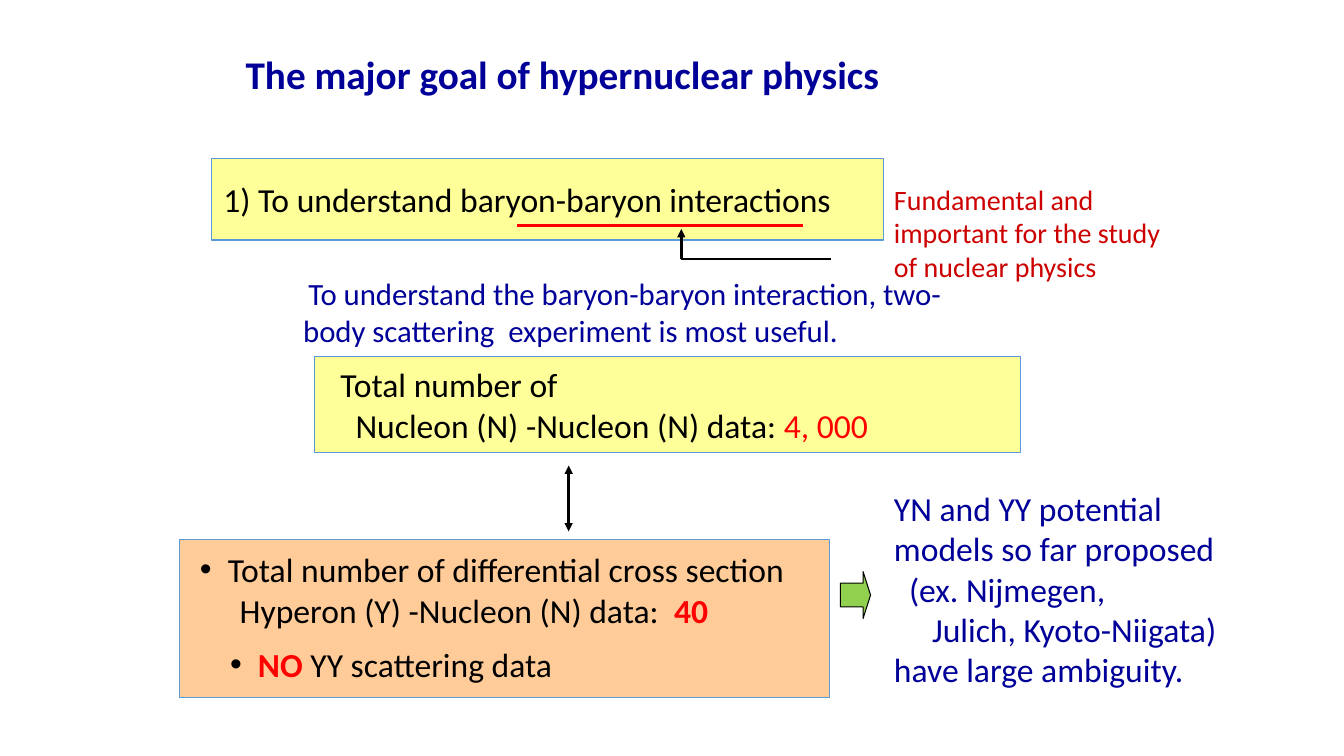
from dataclasses import dataclass

from lxml import etree
from pptx import Presentation
from pptx.dml.color import RGBColor
from pptx.enum.shapes import MSO_CONNECTOR, MSO_SHAPE
from pptx.enum.text import MSO_ANCHOR, MSO_AUTO_SIZE, PP_ALIGN
from pptx.oxml.ns import qn
from pptx.util import Cm, Pt

STRAIGHT = MSO_CONNECTOR.STRAIGHT
RECTANGLE = MSO_SHAPE.RECTANGLE
RIGHT_ARROW = MSO_SHAPE.RIGHT_ARROW
TOP = MSO_ANCHOR.TOP
MIDDLE = MSO_ANCHOR.MIDDLE
NO_RESIZE = MSO_AUTO_SIZE.NONE
LEFT = PP_ALIGN.LEFT


@dataclass(frozen=True)
class Theme:
    font: str = "Calibri"
    navy: str = "000099"
    black: str = "000000"
    red: str = "FF0000"
    crimson: str = "CC0000"
    yellow: str = "FFFF99"
    orange: str = "FFCC99"
    green: str = "92D050"
    outline: str = "5B9BD5"
    title_size: float = 28
    main_size: float = 24
    remark_size: float = 22
    note_size: float = 20
    thin: float = 0.75
    medium: float = 1.75
    thick: float = 2.25


@dataclass(frozen=True)
class Line:
    text: str
    highlight: str = ""
    rest: str = ""
    margin: float = 0
    first: float = 0
    bullet: bool = False
    before: float = 0


class SlideBuilder:
    def __init__(self, slide, theme):
        self.slide = slide
        self.theme = theme

    def place(self, shape, box):
        shape.left, shape.top, shape.width, shape.height = (Cm(length) for length in box)

    def paint(self, shape, fill, outline):
        shape.fill.solid()
        shape.fill.fore_color.rgb = RGBColor.from_string(fill)
        shape.line.color.rgb = RGBColor.from_string(outline)
        shape.line.width = Pt(self.theme.thin)

    def format_run(self, run, size, color, bold=False):
        run.font.name = self.theme.font
        run.font.size = Pt(size)
        run.font.bold = bold
        run.font.color.rgb = RGBColor.from_string(color)

    def add_bullet(self, properties):
        bullet_color = etree.SubElement(properties, qn("a:buClr"))
        etree.SubElement(bullet_color, qn("a:srgbClr"), val=self.theme.black)
        etree.SubElement(properties, qn("a:buFont"), typeface="Arial")
        etree.SubElement(properties, qn("a:buChar"), char="•")

    def fill_text(self, shape, lines, size, color, anchor=TOP, inset=0.25, bold=False, bold_highlight=False):
        frame = shape.text_frame
        frame.word_wrap = True
        frame.auto_size = NO_RESIZE
        frame.vertical_anchor = anchor
        frame.margin_left = Cm(inset)
        frame.text = "\n".join(line.text for line in lines)
        for paragraph, line in zip(frame.paragraphs, lines):
            paragraph.alignment = LEFT
            paragraph.space_before = Pt(line.before)
            properties = paragraph._p.get_or_add_pPr()
            properties.set("marL", str(Cm(line.margin)))
            properties.set("indent", str(Cm(line.first)))
            if line.bullet:
                self.add_bullet(properties)
            else:
                etree.SubElement(properties, qn("a:buNone"))
            for run in paragraph.runs:
                self.format_run(run, size, color, bold)
            if line.highlight:
                run = paragraph.add_run()
                run.text = line.highlight
                self.format_run(run, size, self.theme.red, bold_highlight)
            if line.rest:
                run = paragraph.add_run()
                run.text = line.rest
                self.format_run(run, size, color)

    def title(self, box, text):
        shape = self.slide.shapes.title
        self.place(shape, box)
        self.fill_text(shape, [Line(text)], self.theme.title_size, self.theme.navy, MIDDLE, bold=True)

    def body(self, box, lines, fill):
        shape = self.slide.placeholders[1]
        self.place(shape, box)
        self.paint(shape, fill, self.theme.outline)
        self.fill_text(shape, lines, self.theme.main_size, self.theme.black, bold_highlight=True)
        shape.text_frame.margin_top = Cm(0.25)

    def text(self, box, lines, size, color):
        shape = self.slide.shapes.add_textbox(*(Cm(length) for length in box))
        self.fill_text(shape, lines, size, color)

    def shape(self, kind, box, fill, outline):
        shape = self.slide.shapes.add_shape(kind, *(Cm(length) for length in box))
        shape.shadow.inherit = False
        self.paint(shape, fill, outline)
        return shape

    def panel(self, box, lines, inset):
        shape = self.shape(RECTANGLE, box, self.theme.yellow, self.theme.outline)
        self.fill_text(shape, lines, self.theme.main_size, self.theme.black, MIDDLE, inset)

    def connector(self, start, end, color, width, arrowheads=()):
        connector = self.slide.shapes.add_connector(
            STRAIGHT, *(Cm(length) for length in start + end)
        )
        connector.line.color.rgb = RGBColor.from_string(color)
        connector.line.width = Pt(width)
        properties = connector._element.spPr
        line = properties.find(qn("a:ln"))
        for arrowhead in arrowheads:
            etree.SubElement(line, qn(f"a:{arrowhead}"), type="triangle")
        etree.SubElement(properties, qn("a:effectLst"))


def main():
    theme = Theme()
    presentation = Presentation()
    presentation.slide_width = Cm(33.87)
    presentation.slide_height = Cm(19.05)
    slide = presentation.slides.add_slide(presentation.slide_layouts[1])
    builder = SlideBuilder(slide, theme)

    builder.title((5.94, 1.14, 17, 1.45), "The major goal of hypernuclear physics")

    builder.panel(
        (5.33, 3.99, 16.94, 2.06), [Line("1) To understand baryon-baryon interactions")], inset=0.3
    )
    builder.connector((13.03, 5.69), (20.24, 5.69), theme.red, theme.thick)
    elbow = (17.17, 6.53)
    builder.connector(elbow, (17.17, 5.77), theme.black, theme.medium, ["tailEnd"])
    builder.connector(elbow, (20.93, 6.53), theme.black, theme.medium)
    builder.text(
        (22.28, 4.47, 7.98, 2.82),
        [Line("Fundamental and important for the study"), Line("of nuclear physics")],
        theme.note_size,
        theme.crimson,
    )

    scattering = (
        "To understand the baryon-baryon interaction, "
        "two-body scattering  experiment is most useful."
    )
    builder.text(
        (7.39, 6.81, 18.03, 2.13), [Line(scattering, first=0.13)], theme.remark_size, theme.navy
    )
    builder.panel(
        (7.92, 8.99, 17.81, 2.41),
        [
            Line("Total number of"),
            Line("Nucleon (N) -Nucleon (N) data: ", highlight="4, 000", margin=0.38),
        ],
        inset=0.66,
    )
    builder.connector(
        (14.33, 11.73), (14.33, 13.39), theme.black, theme.medium, ["headEnd", "tailEnd"]
    )

    builder.body(
        (4.52, 13.59, 16.38, 3.99),
        [
            Line("Total number of differential cross section", margin=0.97, first=-0.7, bullet=True),
            Line("Hyperon (Y) -Nucleon (N) data:  ", highlight="40", margin=1.27),
            Line("", highlight="NO ", rest="YY scattering data", margin=1.73, first=-0.7, bullet=True, before=10),
        ],
        theme.orange,
    )
    arrow = builder.shape(RIGHT_ARROW, (21.18, 14.4, 0.76, 1.19), theme.green, theme.black)
    arrow.adjustments[1] = 0.25
    builder.text(
        (22.28, 12.17, 9.53, 6.02),
        [
            Line("YN and YY potential models so far proposed"),
            Line("(ex. Nijmegen,", first=0.38),
            Line("Julich, Kyoto-Niigata) have large ambiguity.", first=0.96),
        ],
        theme.main_size,
        theme.navy,
    )

    presentation.save("out.pptx")


if __name__ == "__main__":
    main()
